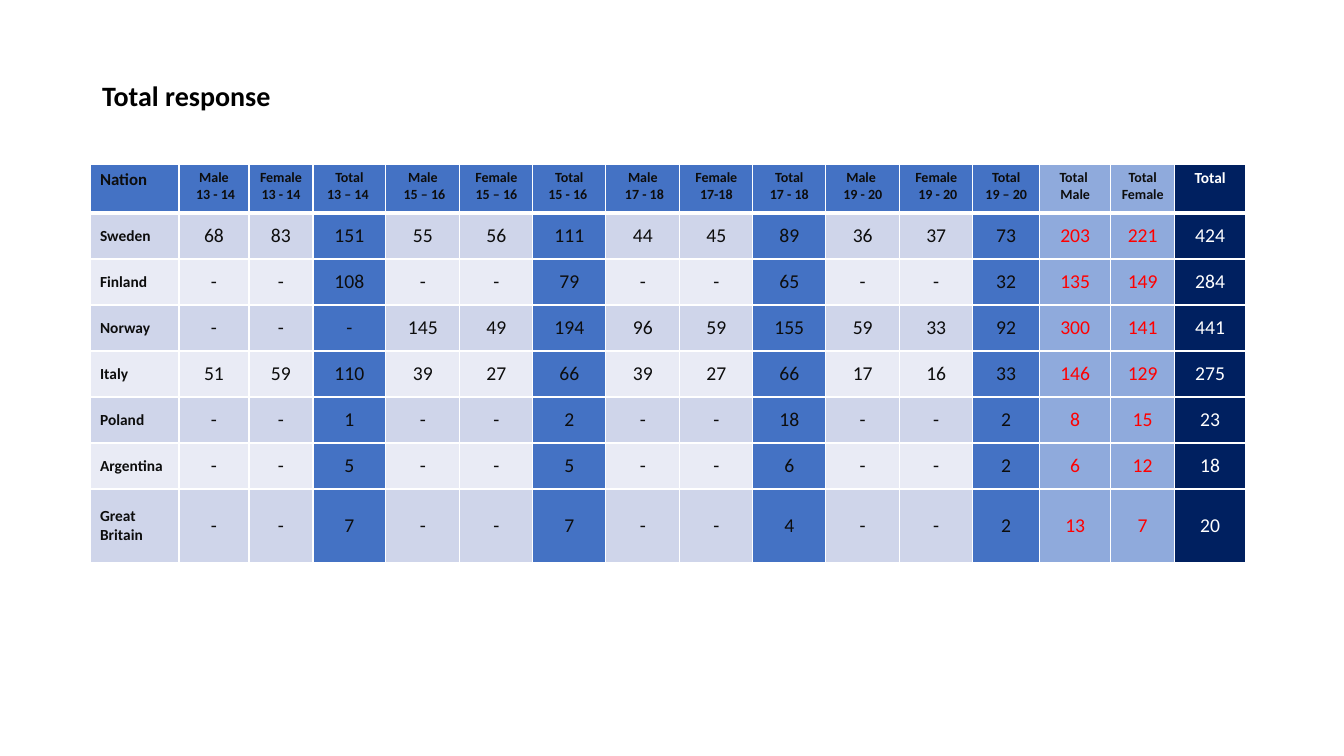
from lxml.etree import SubElement
from pptx import Presentation
from pptx.dml.color import RGBColor
from pptx.enum.text import MSO_ANCHOR as Anchor, PP_ALIGN as Align
from pptx.oxml.ns import qn
from pptx.util import Emu, Pt

SCALE = 914400 / 100.8
WHITE, INK, RED = "FFFFFF", "0D0D0D", "FF0000"
BLUE, PALE, NAVY = "4472C4", "8FAADC", "002060"
BANDS = ["CFD5EA", "E9EBF5"]
WIDTHS = [89, 70, 64] + [73, 74, 73] * 3 + [67, 71, 64, 71]
HEIGHTS = [49] + [46] * 6 + [74]
# "\v" breaks a line, "\n" starts a paragraph
HEADS = [
    "Nation",
    "Male\v 13 - 14", "Female\n13 - 14", "Total\v13 – 14 ",
    "Male\n 15 – 16", "Female 15 – 16", "Total\v15 - 16 ",
    "Male\v 17 - 18", "Female 17-18", "Total\n17 - 18",
    "Male \v19 - 20", "Female\v 19 - 20", "Total\v19 – 20",
    "Total \nMale", "Total\nFemale", "Total",
]
COUNTS = {
    "Sweden": "68 83 151 55 56 111 44 45 89 36 37 73 203 221 424",
    "Finland": "- - 108 - - 79 - - 65 - - 32 135 149 284",
    "Norway": "- - - 145 49 194 96 59 155 59 33 92 300 141 441",
    "Italy": "51 59 110 39 27 66 39 27 66 17 16 33 146 129 275",
    "Poland": "- - 1 - - 2 - - 18 - - 2 8 15 23",
    "Argentina": "- - 5 - - 5 - - 6 - - 2 6 12 18",
    "Great \vBritain": "- - 7 - - 7 - - 4 - - 2 13 7 20",
}


def px(n):
    return Emu(round(n * SCALE))


def rgb(code):
    return RGBColor.from_string(code)


def style(para, size, color, bold, align):
    font = para.font
    font.name, font.size, font.bold = "Calibri", Pt(size), bold
    font.color.rgb = rgb(color)
    para.alignment = align


def edge(cell, foot):
    """Draw white borders, the lower one foot points wide."""
    props = cell._tc.get_or_add_tcPr()
    for i, (side, width) in enumerate([("L", 1), ("R", 1), ("T", 1), ("B", foot)]):
        line = props.makeelement(qn(f"a:ln{side}"), w=str(Pt(width)))
        fill = SubElement(line, qn("a:solidFill"))
        SubElement(fill, qn("a:srgbClr"), val=WHITE)
        props.insert(i, line)


def look(row, col):
    """Return fill, text colour, size and boldness of a cell."""
    last = len(WIDTHS) - 1
    head = row == 0
    if col == last:
        return NAVY, WHITE, 11 if head else 14, head
    if col >= last - 2:
        return PALE, INK if head else RED, 10 if head else 14, head
    if head:
        return BLUE, INK, 10 if col else 12, True
    if col == 0:
        return BANDS[(row - 1) % 2], INK, 11, True
    return BLUE if col % 3 == 0 else BANDS[(row - 1) % 2], INK, 14, False


def fill_cell(cell, text, row, col):
    back, color, size, bold = look(row, col)
    cell.text = text
    cell.fill.solid()
    cell.fill.fore_color.rgb = rgb(back)
    cell.vertical_anchor = Anchor.MIDDLE if row else Anchor.TOP
    for para in cell.text_frame.paragraphs:
        style(para, size, color, bold, Align.CENTER if col else Align.LEFT)
    edge(cell, 1 if row else 3)


def add_counts(slide, left, top):
    rows = [HEADS] + [[name, *line.split()] for name, line in COUNTS.items()]
    frame = slide.shapes.add_table(len(rows), len(HEADS), px(left), px(top),
                                   px(sum(WIDTHS)), px(sum(HEIGHTS)))
    table = frame.table
    table.first_row = table.horz_banding = False
    for col, width in zip(table.columns, WIDTHS):
        col.width = px(width)
    for line, height in zip(table.rows, HEIGHTS):
        line.height = px(height)
    for r, texts in enumerate(rows):
        for c, text in enumerate(texts):
            fill_cell(table.cell(r, c), text, r, c)


def set_title(slide, left, top, width, height):
    title = slide.shapes.title
    title.left, title.top = px(left), px(top)
    title.width, title.height = px(width), px(height)
    frame = title.text_frame
    frame.text = "Total response"
    frame.vertical_anchor = Anchor.MIDDLE
    frame.margin_top = px(25)
    style(frame.paragraphs[0], 20, "000000", True, Align.LEFT)
    frame.paragraphs[0].line_spacing = 0.9


def main():
    deck = Presentation()
    deck.slide_width, deck.slide_height = px(1344), px(756)
    slide = deck.slides.add_slide(deck.slide_layouts[5])
    set_title(slide, 92, 40, 1159, 94)
    add_counts(slide, 90, 164)
    deck.save("out.pptx")


if __name__ == "__main__":
    main()
